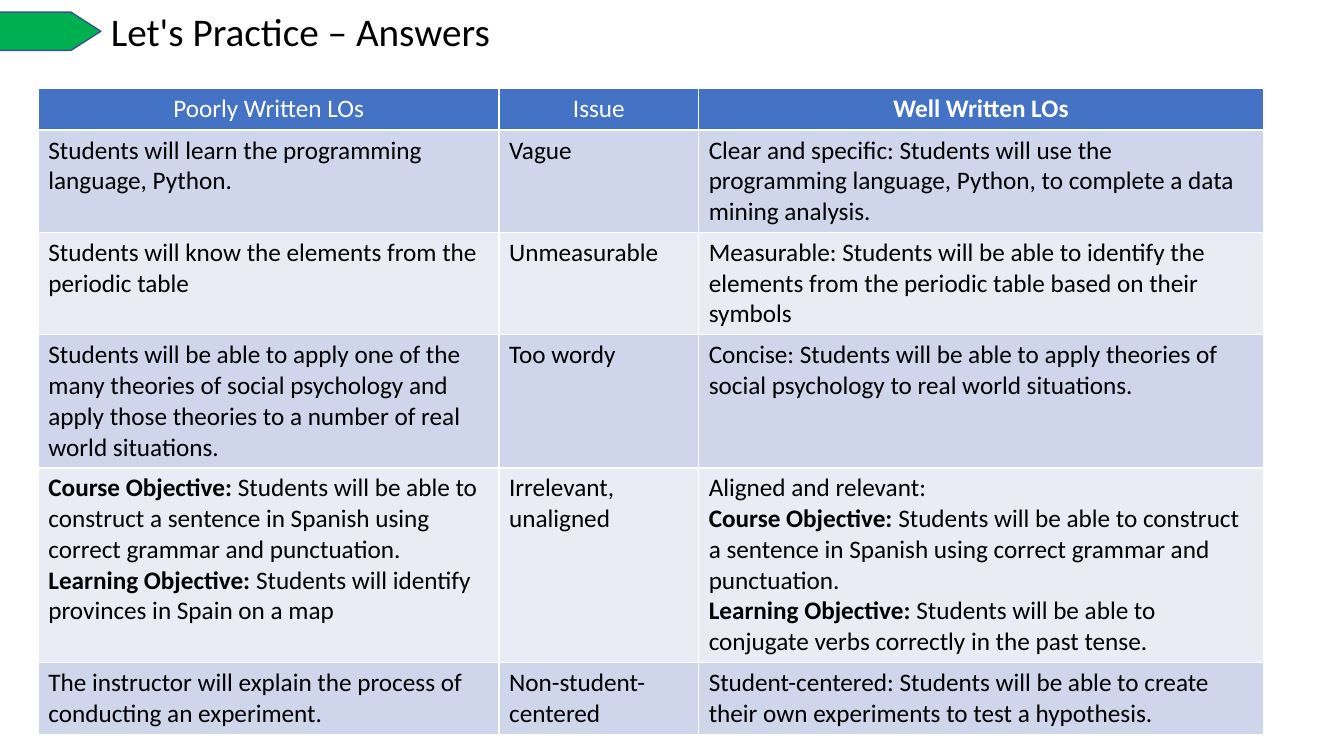
from pptx import Presentation
from pptx.dml.color import RGBColor
from pptx.enum.shapes import MSO_SHAPE
from pptx.enum.text import MSO_ANCHOR, MSO_AUTO_SIZE, PP_ALIGN
from pptx.util import Inches, Pt

COLORS = {
    "header": "4472C4",
    "odd": "CFD5EA",
    "even": "E9EBF5",
    "marker": "00B050",
    "outline": "325491",
    "white": "FFFFFF",
    "text": "000000",
}

COURSE = "**Course Objective:** Students will be able to construct a sentence in Spanish using correct grammar and punctuation."

# Text between double asterisks is bold; each line is a paragraph.
HEADER = ["Poorly Written LOs", "Issue", "**Well Written LOs**"]
OBJECTIVES = [
    ["Students will learn the programming language, Python.",
     "Vague",
     "Clear and specific: Students will use the programming language, Python, to complete a data mining analysis."],
    ["Students will know the elements from the periodic table",
     "Unmeasurable",
     "Measurable: Students will be able to identify the elements from the periodic table based on their symbols"],
    ["Students will be able to apply one of the many theories of social psychology and apply those theories to a number of real world situations.",
     "Too wordy",
     "Concise: Students will be able to apply theories of social psychology to real world situations."],
    [COURSE + "\n**Learning Objective:** Students will identify provinces in Spain on a map",
     "Irrelevant, unaligned",
     "Aligned and relevant:\n" + COURSE
     + "\n**Learning Objective:** Students will be able to conjugate verbs correctly in the past tense."],
    ["The instructor will explain the process of conducting an experiment.",
     "Non-student-centered",
     "Student-centered: Students will be able to create their own experiments to test a hypothesis."],
]


def rgb(name):
    return RGBColor.from_string(COLORS[name])


class SlideBuilder:
    font = "Calibri"
    title_size = 28
    body_size = 18

    def __init__(self, prs):
        self.slide = prs.slides.add_slide(prs.slide_layouts[5])

    def format_run(self, r, size, color, bold=False):
        r.font.name = self.font
        r.font.size = Pt(size)
        r.font.bold = bold
        r.font.color.rgb = rgb(color)

    def title(self, text, left, top, width, height):
        sp = self.slide.shapes.title
        sp.left, sp.top = Inches(left), Inches(top)
        sp.width, sp.height = Inches(width), Inches(height)
        tf = sp.text_frame
        tf.text = text
        tf.word_wrap = True
        tf.auto_size = MSO_AUTO_SIZE.NONE
        tf.vertical_anchor = MSO_ANCHOR.TOP
        p = tf.paragraphs[0]
        p.alignment = PP_ALIGN.LEFT
        self.format_run(p.runs[0], self.title_size, "text")

    def marker(self, left, top, width, height):
        sp = self.slide.shapes.add_shape(
            MSO_SHAPE.FLOWCHART_OFFPAGE_CONNECTOR,
            Inches(left), Inches(top), Inches(width), Inches(height))
        sp.rotation = 270
        sp.shadow.inherit = False
        sp.fill.solid()
        sp.fill.fore_color.rgb = rgb("marker")
        sp.line.color.rgb = rgb("outline")
        sp.line.width = Pt(1)

    def cell(self, cell, text, fill, color, align):
        cell.fill.solid()
        cell.fill.fore_color.rgb = rgb(fill)
        tf = cell.text_frame
        for i, line in enumerate(text.split("\n")):
            p = tf.add_paragraph() if i else tf.paragraphs[0]
            p.alignment = align
            for j, part in enumerate(line.split("**")):
                if part:
                    r = p.add_run()
                    r.text = part
                    self.format_run(r, self.body_size, color, bold=j % 2 == 1)

    def table(self, rows, left, top, col_widths, row_height):
        table = self.slide.shapes.add_table(
            len(rows), len(col_widths), Inches(left), Inches(top),
            Inches(sum(col_widths)), Inches(row_height * len(rows))).table
        for column, width in zip(table.columns, col_widths):
            column.width = Inches(width)
        for i, row in enumerate(rows):
            table.rows[i].height = Inches(row_height)
            if i == 0:
                style = ("header", "white", PP_ALIGN.CENTER)
            else:
                style = ("odd" if i % 2 else "even", "text", PP_ALIGN.LEFT)
            for j, text in enumerate(row):
                self.cell(table.cell(i, j), text, *style)


def main():
    prs = Presentation()
    prs.slide_width, prs.slide_height = Inches(13.33), Inches(7.5)
    s = SlideBuilder(prs)
    s.table([HEADER] + OBJECTIVES, 0.38, 0.88, [4.57, 1.98, 5.6], 0.41)
    s.marker(0.07, -0.43, 0.38, 1.48)
    s.title("Let's Practice – Answers", 1, 0.02, 11.64, 0.57)
    prs.save("out.pptx")


if __name__ == "__main__":
    main()
